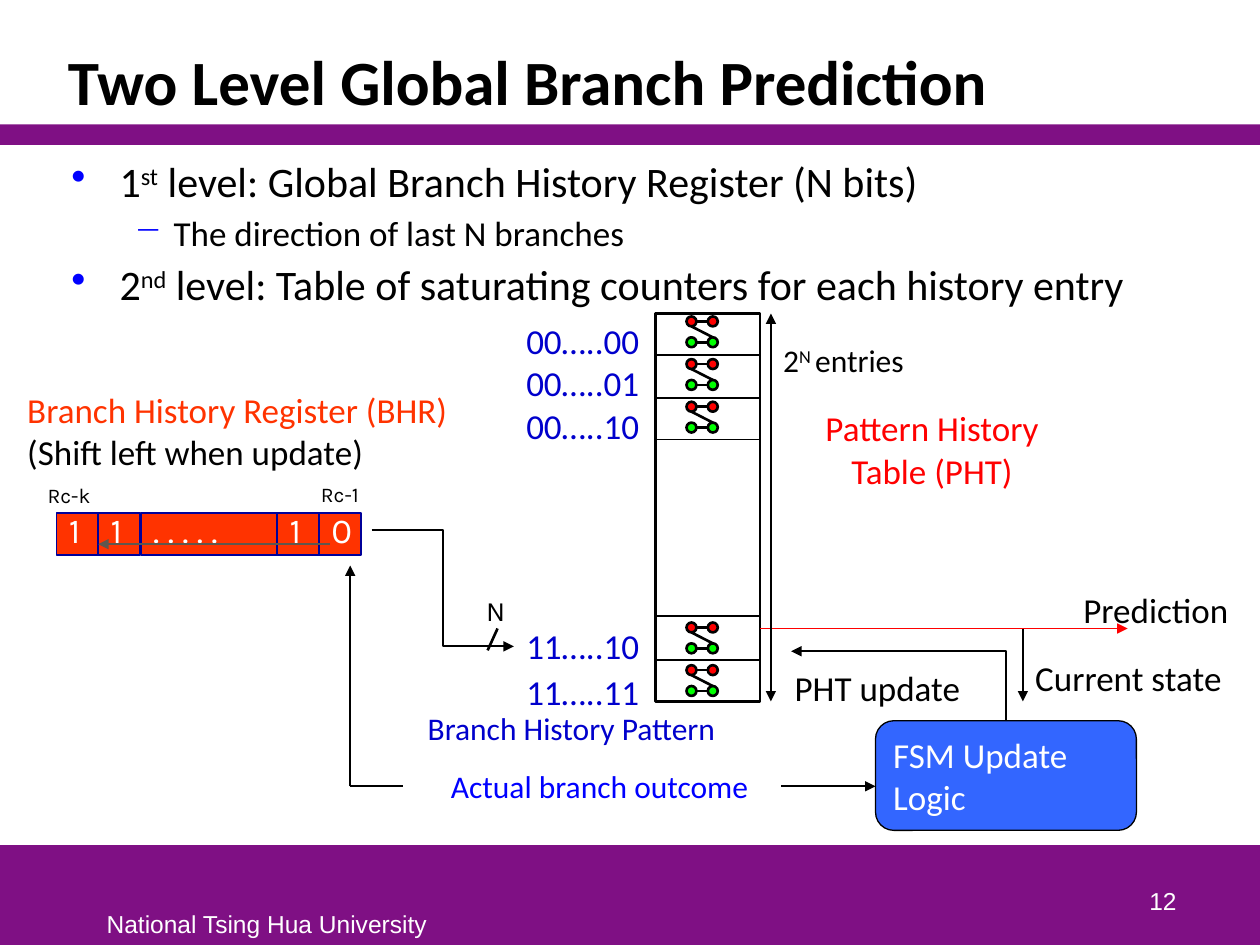
from dataclasses import dataclass
from typing import Any

from lxml import etree
from pptx import Presentation
from pptx.dml.color import RGBColor
from pptx.enum.shapes import MSO_CONNECTOR, MSO_SHAPE
from pptx.enum.text import MSO_ANCHOR, MSO_AUTO_SIZE, PP_ALIGN
from pptx.oxml.ns import qn
from pptx.util import Cm, Pt

RECT, ROUND, OVAL = MSO_SHAPE.RECTANGLE, MSO_SHAPE.ROUNDED_RECTANGLE, MSO_SHAPE.OVAL
LINE, ELBOW = MSO_CONNECTOR.STRAIGHT, MSO_CONNECTOR.ELBOW
LEFT, MID, RIGHT = PP_ALIGN.LEFT, PP_ALIGN.CENTER, PP_ALIGN.RIGHT
TOP, CENTRE, BOTTOM = MSO_ANCHOR.TOP, MSO_ANCHOR.MIDDLE, MSO_ANCHOR.BOTTOM
FIT = MSO_AUTO_SIZE.SHAPE_TO_FIT_TEXT

COLORS = {
    "purple": "7F1084", "white": "FFFFFF", "black": "000000", "red": "FF0000",
    "green": "00FF00", "blue": "0000FF", "navy": "0000CC", "edge": "000099",
    "orange": "FF3300", "box": "3366FF", "grey": "5E574E",
}


@dataclass
class Label:
    text: str
    x: float
    y: float
    w: float
    h: float
    size: int = 20
    color: str = "black"
    font: str = "Calibri"
    align: Any = LEFT
    wrap: bool = False


@dataclass
class Bit:
    text: str
    x: float
    w: float = 0.85


@dataclass
class Arrow:
    x1: float
    y1: float
    x2: float
    y2: float
    color: str = "black"
    width: float = 1
    head: bool = False
    tail: bool = True


@dataclass
class Point:
    text: str
    size: int
    level: int
    mark: str
    left: float
    hang: float


def rgb(name: str) -> RGBColor:
    return RGBColor.from_string(COLORS[name])


def write(para: Any, text: str, *, size: int = 20, color: str = "black",
          font: str = "Calibri", bold: bool = False, align: Any = LEFT) -> None:
    """Add text to a paragraph; parts between ^ marks are raised."""
    para.alignment = align
    for i, part in enumerate(text.split("^")):
        run = para.add_run()
        run.text = part
        run.font.size, run.font.name, run.font.bold = Pt(size), font, bold
        run.font.color.rgb = rgb(color)
        if i % 2:
            run.font._element.set("baseline", "30000")


def add_text(shapes: Any, x: float, y: float, w: float, h: float, text: str, *,
             wrap: bool = True, anchor: Any = TOP, **style: Any) -> Any:
    box = shapes.add_textbox(Cm(x), Cm(y), Cm(w), Cm(h))
    frame = box.text_frame
    frame.word_wrap, frame.vertical_anchor = wrap, anchor
    if not wrap:
        frame.auto_size = FIT
    for i, row in enumerate(text.split("\n")):
        write(frame.add_paragraph() if i else frame.paragraphs[0], row, **style)
    return box


def add_box(shapes: Any, kind: Any, x: float, y: float, w: float, h: float,
            fill: str = "", line: str = "", width: float = 1) -> Any:
    box = shapes.add_shape(kind, Cm(x), Cm(y), Cm(w), Cm(h))
    box.shadow.inherit = False
    if fill:
        box.fill.solid()
        box.fill.fore_color.rgb = rgb(fill)
    else:
        box.fill.background()
    if line:
        box.line.color.rgb, box.line.width = rgb(line), Pt(width)
    else:
        box.line.fill.background()
    return box


def add_line(shapes: Any, arrow: Arrow, kind: Any = LINE) -> Any:
    ends = (Cm(v) for v in (arrow.x1, arrow.y1, arrow.x2, arrow.y2))
    conn = shapes.add_connector(kind, *ends)
    conn.line.color.rgb, conn.line.width = rgb(arrow.color), Pt(arrow.width)
    for tag, on in (("a:headEnd", arrow.head), ("a:tailEnd", arrow.tail)):
        if on:
            etree.SubElement(conn.line._get_or_add_ln(), qn(tag), type="triangle")
    etree.SubElement(conn._element.spPr, qn("a:effectLst"))
    return conn


def add_point(para: Any, point: Point) -> None:
    props = para._p.get_or_add_pPr()
    props.set("marL", str(Cm(point.left)))
    props.set("indent", str(-Cm(point.hang)))
    tint = etree.SubElement(props, qn("a:buClr"))
    etree.SubElement(tint, qn("a:srgbClr"), val=COLORS["blue"])
    etree.SubElement(props, qn("a:buChar"), char=point.mark)
    para.level = point.level
    write(para, point.text, size=point.size)


def add_counter(shapes: Any, top: float) -> None:
    """Draw the four states of a two-bit counter."""
    group = shapes.add_group_shape().shapes
    x, dot, dx, dy = 13.84, 0.2, 0.43, 0.42
    half = dot / 2
    for row, fill in enumerate(("red", "green")):
        y = top + row * dy
        for col in range(2):
            add_box(group, OVAL, x + col * dx, y, dot, dot, fill, "black", 1.5)
        add_line(group, Arrow(x + dot, y + half, x + dx, y + half, width=1.5, tail=False))
    add_line(group, Arrow(x + half, top + dot, x + dx + half, top + dy, width=1.5, tail=False))


POINTS = [
    Point("1^st^ level: Global Branch History Register (N bits)", 24, 0, "•", 0.97, 0.97),
    Point("The direction of last N branches", 20, 1, "−", 2.06, 0.79),
    Point("2^nd^ level: Table of saturating counters for each history entry",
          24, 0, "•", 0.97, 0.97),
]
BITS = [Bit("1", 1.14), Bit("1", 1.98), Bit(". . . . .", 2.84, 2.74),
        Bit("1", 5.59), Bit("0", 6.43)]
ROWS = {"00…..00": 6.32, "00…..01": 7.16, "00…..10": 8.03,
        "11…..10": 12.47, "11…..11": 13.39}
RULES = [7.16, 8.03, 8.86, 12.42, 13.31]
COUNTERS = [6.38, 7.24, 8.1, 12.55, 13.41]
LABELS = [
    Label("Branch History Pattern", 7.29, 14.17, 8.46, 1.02, 18, "navy", align=MID, wrap=True),
    Label("Pattern History Table (PHT)", 15.88, 8.08, 5.82, 1.96, color="red",
          align=MID, wrap=True),
    Label("Prediction", 21.59, 11.73, 3.63, 1.12),
    Label("Rc-k", 0.71, 9.6, 1.42, 0.76, 12, font="Karla"),
    Label("Rc-1", 6.22, 9.58, 1.42, 0.76, 12, font="Karla"),
    Label("Actual branch outcome", 8.84, 15.34, 6.58, 1.02, 18, "blue"),
    Label("Branch History Register (BHR)", 0.3, 7.7, 9.07, 1.12, color="orange"),
    Label("(Shift left when update)", 0.3, 8.55, 7.4, 1.12),
    Label("N", 9.55, 11.84, 0.91, 0.94, 16, font="Karla"),
    Label("2^N ^entries", 15.54, 6.76, 3.02, 1.02, 18),
    Label("Current state", 20.62, 13.11, 4.47, 1.12),
    Label("PHT update", 15.77, 13.31, 3.89, 1.12),
]
ARROWS = [
    Arrow(15.32, 12.67, 22.73, 12.67, "red"),
    Arrow(7.06, 15.85, 7.06, 11.4),
    Arrow(7.06, 15.85, 8.13, 15.85, tail=False),
    Arrow(15.75, 15.85, 17.65, 15.85),
    Arrow(10.03, 12.67, 9.83, 13.11, width=1.5, tail=False),
    Arrow(15.54, 6.32, 15.54, 14.14, head=True),
    Arrow(20.62, 12.67, 20.62, 14.14),
    Arrow(6.65, 10.97, 1.98, 10.97, "grey", 1.5),
]


def main() -> None:
    deck = Presentation()
    deck.slide_width, deck.slide_height = Cm(25.4), Cm(19.05)
    shapes = deck.slides.add_slide(deck.slide_layouts[6]).shapes

    # Bands, title and footer
    add_box(shapes, RECT, 0, 17.04, 25.4, 2.01, "purple")
    add_box(shapes, RECT, 0, 2.51, 25.4, 0.41, "purple")
    foot = {"size": 14, "color": "white", "font": "Arial"}
    add_text(shapes, 1.9, 18.21, 7.01, 0.84, "National Tsing Hua University", wrap=False, **foot)
    add_text(shapes, 18.69, 17.3, 5.28, 1.27, "12", anchor=BOTTOM, align=RIGHT, **foot)
    title = add_text(shapes, 1.12, 0.64, 22.78, 1.88, "Two Level Global Branch Prediction",
                     anchor=BOTTOM, size=36, bold=True)
    title.text_frame.paragraphs[0].line_spacing = 0.85

    # Bullet points
    body = shapes.add_textbox(Cm(1.19), Cm(3.02), Cm(22.71), Cm(3.3)).text_frame
    body.word_wrap = True
    for i, point in enumerate(POINTS):
        para = body.add_paragraph() if i else body.paragraphs[0]
        add_point(para, point)
        if i:
            para.space_before = Pt(3)

    # History register
    for bit in BITS:
        frame = add_box(shapes, RECT, bit.x, 10.34, bit.w, 0.85, "orange", "edge").text_frame
        frame.word_wrap, frame.vertical_anchor = False, CENTRE
        frame.margin_top, frame.margin_bottom = Cm(0), Cm(0.18)
        write(frame.paragraphs[0], bit.text, color="white", font="Karla")

    # Pattern table with its row names and counters
    add_box(shapes, RECT, 13.21, 6.32, 2.11, 7.82, line="black", width=1.5)
    names = {text: add_text(shapes, 10.36, y, 2.79, 1.12, text, wrap=False, color="navy")
             for text, y in ROWS.items()}
    for y in RULES:
        add_line(shapes, Arrow(13.21, y, 15.32, y, tail=False))
    for y in COUNTERS:
        add_counter(shapes, y)

    # Update logic
    logic = add_box(shapes, ROUND, 17.65, 14.53, 5.26, 2.21, "box", "black", 0.75)
    frame = logic.text_frame
    frame.word_wrap, frame.vertical_anchor = True, CENTRE
    write(frame.paragraphs[0], "FSM Update", color="white")
    write(frame.add_paragraph(), "Logic", color="white")

    # Labels and arrows
    for tag in LABELS:
        add_text(shapes, tag.x, tag.y, tag.w, tag.h, tag.text, wrap=tag.wrap, size=tag.size,
                 color=tag.color, font=tag.font, align=tag.align)
    for arrow in ARROWS:
        add_line(shapes, arrow)

    # Bent links: register to row, logic back to table
    index = add_line(shapes, Arrow(7.49, 10.69, 10.36, 13.03), ELBOW)
    index.end_connect(names["11…..10"], 1)
    update = add_line(shapes, Arrow(15.95, 13.13, 20.28, 14.53, head=True, tail=False), ELBOW)
    update._element.spPr.find(qn("a:prstGeom")).set("prst", "bentConnector2")
    update.end_connect(logic, 0)

    deck.save("out.pptx")


if __name__ == "__main__":
    main()
